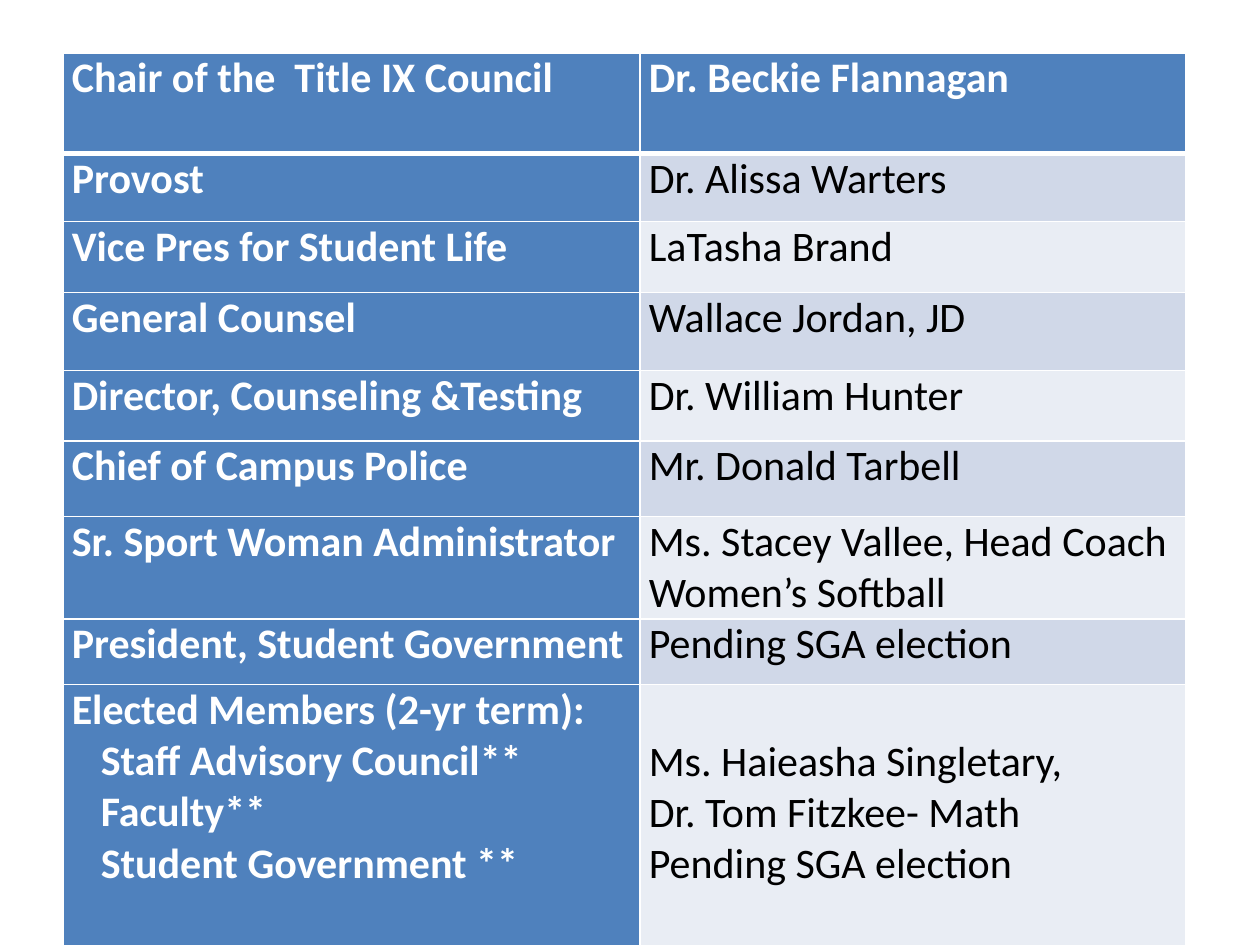
from dataclasses import dataclass
from lxml.etree import SubElement
from pptx import Presentation
from pptx.dml.color import RGBColor as RGB
from pptx.oxml.ns import qn
from pptx.table import _Cell as Cell
from pptx.util import Inches, Pt


@dataclass(frozen=True)
class Theme:
    font: str = "Calibri"
    size: float = 24
    blue: str = "4F81BD"
    bands: tuple[str, str] = ("D0D8E8", "E9EDF4")
    white: str = "FFFFFF"
    black: str = "000000"
    thin: float = 1
    thick: float = 3


@dataclass(frozen=True)
class Seat:
    role: str
    holder: str
    height: float
    members: tuple[tuple[str, str], ...] = ()


THEME = Theme()
LEFT, TOP = 0.5, 0.42
COLS = (4.58, 4.33)
PAD, INDENT, LINE = 0.07, 0.23, 0.41

SEATS = (
    Seat("Chair of the  Title IX Council", "Dr. Beckie Flannagan", 0.8),
    Seat("Provost", "Dr. Alissa Warters", 0.54),
    Seat("Vice Pres for Student Life", "LaTasha Brand", 0.56),
    Seat("General Counsel", "Wallace Jordan, JD", 0.62),
    Seat("Director, Counseling &Testing", "Dr. William Hunter", 0.56),
    Seat("Chief of Campus Police", "Mr. Donald Tarbell", 0.6),
    Seat("Sr. Sport Woman Administrator",
         "Ms. Stacey Vallee, Head Coach Women’s Softball", 0.81),
    Seat("President, Student Government", "Pending SGA election", 0.52),
    Seat("Elected Members (2-yr term):", "", 2.2, (
        ("Staff Advisory Council**", "Ms. Haieasha Singletary,"),
        ("Faculty**", "Dr. Tom Fitzkee- Math"),
        ("Student Government **", "Pending SGA election"),
    )),
)


def write(cell: Cell, lines: list[str], *, color: str, bold: bool,
          indent: float = 0, top: float = 0) -> None:
    """Fill a cell with paragraphs, indenting all but the first."""
    cell.margin_left = cell.margin_right = Inches(PAD)
    cell.margin_top, cell.margin_bottom = Inches(top), 0
    frame = cell.text_frame
    for i, line in enumerate(lines):
        para = frame.add_paragraph() if i else frame.paragraphs[0]
        if i and indent:
            para._p.get_or_add_pPr().set("marL", str(Inches(indent)))
        run = para.add_run()
        run.text = line
        font = run.font
        font.name, font.size, font.bold = THEME.font, Pt(THEME.size), bold
        font.color.rgb = RGB.from_string(color)


def paint(cell: Cell, color: str, *, over: float, under: float) -> None:
    """Set the fill and the white borders; over and under are line widths."""
    props = cell._tc.get_or_add_tcPr()
    sides = {"L": THEME.thin, "R": THEME.thin, "T": over, "B": under}
    for side, width in sides.items():
        line = SubElement(props, qn(f"a:ln{side}"), w=str(Pt(width)))
        fill = SubElement(line, qn("a:solidFill"))
        SubElement(fill, qn("a:srgbClr"), val=THEME.white)
    cell.fill.solid()
    cell.fill.fore_color.rgb = RGB.from_string(color)


def main() -> None:
    deck = Presentation()
    deck.slide_width, deck.slide_height = Inches(10), Inches(7.5)
    slide = deck.slides.add_slide(deck.slide_layouts[6])
    table = slide.shapes.add_table(
        len(SEATS), len(COLS), Inches(LEFT), Inches(TOP),
        Inches(sum(COLS)), Inches(sum(s.height for s in SEATS))).table
    for col, width in zip(table.columns, COLS):
        col.width = Inches(width)

    for i, seat in enumerate(SEATS):
        table.rows[i].height = Inches(seat.height)
        head = i == 0
        role, holder = table.cell(i, 0), table.cell(i, 1)
        roles = [seat.role] + [m[0] for m in seat.members]
        names = [m[1] for m in seat.members] or [seat.holder]
        write(role, roles, color=THEME.white, bold=True, indent=INDENT)
        write(holder, names, color=THEME.white if head else THEME.black,
              bold=head, top=LINE if seat.members else 0)
        band = THEME.blue if head else THEME.bands[(i - 1) % 2]
        for cell, color in ((role, THEME.blue), (holder, band)):
            paint(cell, color, over=THEME.thick if i == 1 else THEME.thin,
                  under=THEME.thick if head else THEME.thin)
    deck.save("out.pptx")


if __name__ == "__main__":
    main()
